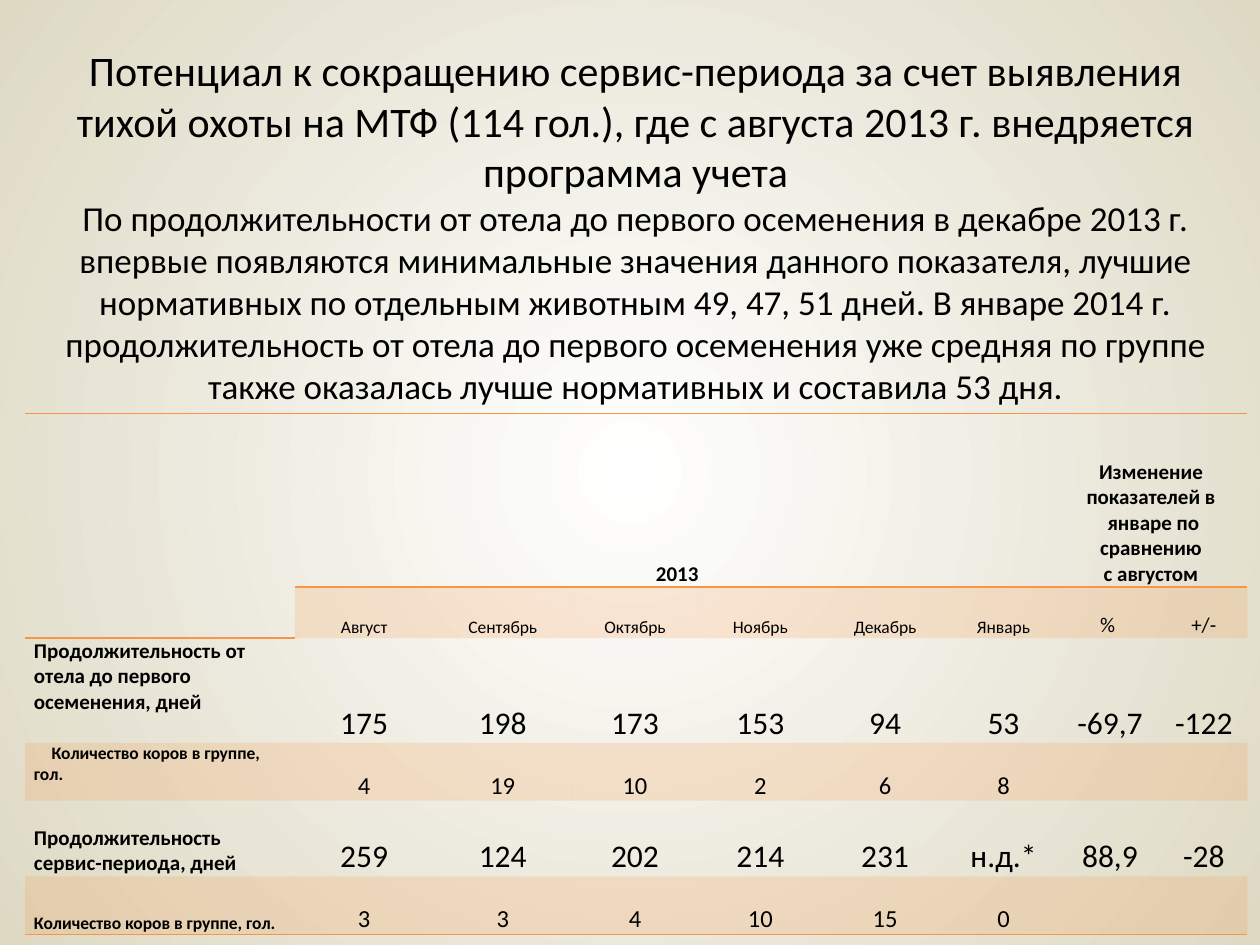
from lxml.etree import SubElement
from pptx import Presentation
from pptx.dml.color import RGBColor
from pptx.enum.text import MSO_ANCHOR as Anchor, PP_ALIGN as Align
from pptx.oxml.ns import qn
from pptx.util import Inches, Pt

BLACK = RGBColor(0x00, 0x00, 0x00)
WHITE = RGBColor(0xFF, 0xFF, 0xFF)
SAND = RGBColor(0xDD, 0xD9, 0xC3)
ORANGE = RGBColor(0xF7, 0x96, 0x46)
NO_STYLE = "{2D5ABB26-0587-4C30-8999-92F81FD0307C}"


def write(paragraph, text, size=12, bold=False, align=Align.CENTER, indent=0):
    paragraph.alignment = align
    if indent:
        paragraph._p.get_or_add_pPr().set("indent", str(Inches(indent)))
    run = paragraph.add_run()
    run.text = text
    font = run.font
    font.name, font.size, font.bold = "Calibri", Pt(size), bold
    font.color.rgb = BLACK


def add_border(cell, side):
    line = SubElement(cell._tc.get_or_add_tcPr(), qn(f"a:ln{side}"), w=str(Pt(1)))
    SubElement(SubElement(line, qn("a:solidFill")), qn("a:srgbClr"), val=str(ORANGE))


prs = Presentation()
prs.slide_width, prs.slide_height = Inches(10), Inches(7.5)
slide = prs.slides.add_slide(prs.slide_layouts[5])

# Background: round gradient from the centre
background = slide.background.fill
background.gradient()
for stop, color in zip(background.gradient_stops, (WHITE, SAND)):
    stop.color.rgb = color
gradient = slide._element.find(".//" + qn("a:gradFill"))
gradient.remove(gradient.find(qn("a:lin")))
circle = SubElement(gradient, qn("a:path"), path="circle")
SubElement(circle, qn("a:fillToRect"), l="50000", t="50000", r="50000", b="50000")

# Title with its explanation
title = slide.shapes.title
title.left, title.top = Inches(0.28), Inches(0.3)
title.width, title.height = Inches(9.53), Inches(2.98)
title.text_frame.word_wrap = True
title.text_frame.vertical_anchor = Anchor.MIDDLE
heading = title.text_frame.paragraphs[0]
write(heading, "Потенциал к сокращению сервис-периода за счет выявления тихой охоты "
      "на МТФ (114 гол.), где с августа 2013 г. внедряется программа учета", size=24)
heading.add_line_break()
write(heading, "По продолжительности от отела до первого осеменения в декабре 2013 г. "
      "впервые появляются минимальные значения данного показателя, лучшие нормативных "
      "по отдельным животным 49, 47, 51 дней. В январе 2014 г. продолжительность "
      "от отела до первого осеменения уже средняя по группе также оказалась лучше "
      "нормативных и составила 53 дня.", size=20)

# Table grid
col_widths = [2.14, 1.1, 1.1, 1, 0.99, 0.99, 0.89, 0.8, 0.69]
row_heights = [1.38, 0.3, 0.83, 0.46, 0.6, 0.46]
indicators = slide.shapes.add_table(
    len(row_heights), len(col_widths),
    Inches(0.2), Inches(3.28), Inches(9.69), Inches(4.03)).table
indicators.first_row = indicators.horz_banding = False
indicators._tbl.tblPr.find(qn("a:tableStyleId")).text = NO_STYLE
for column, width in zip(indicators.columns, col_widths):
    column.width = Inches(width)
for row, height in zip(indicators.rows, row_heights):
    row.height = Inches(height)
indicators.cell(0, 0).merge(indicators.cell(1, 0))
indicators.cell(0, 1).merge(indicators.cell(0, 6))
indicators.cell(0, 7).merge(indicators.cell(0, 8))

# Rows of content, with the text size of the values in each
change = "Изменение \nпоказателей в \nянваре по сравнению \nс августом "
days_to_first = "Продолжительность от отела до первого осеменения, дней"
service_period = "Продолжительность сервис-периода, дней"
cow_count = "Количество коров в группе, гол."
content = [
    (12, ["", "2013", "", "", "", "", "", change, ""]),
    (10, ["", "Август", "Сентябрь", "Октябрь", "Ноябрь", "Декабрь", "Январь", "% ", "+/-"]),
    (18, [days_to_first, "175", "198", "173", "153", "94", "53", "-69,7", "-122"]),
    (14, [cow_count, "4", "19", "10", "2", "6", "8", "", ""]),
    (18, [service_period, "259", "124", "202", "214", "231", "н.д.*", "88,9", "-28"]),
    (14, [cow_count, "3", "3", "4", "10", "15", "0", "", ""]),
]
for r, (value_size, texts) in enumerate(content):
    for c, text in enumerate(texts):
        cell = indicators.cell(r, c)

        # Rules above and below the header, and under the last row
        if r == 0:
            add_border(cell, "T")
        if r in (0, 5) or (r, c) == (1, 0):
            add_border(cell, "B")

        # Tinted every second row
        if r % 2 and (r, c) != (1, 0):
            cell.fill.solid()
            cell.fill.fore_color.rgb = ORANGE
            tint = cell._tc.tcPr.find(qn("a:solidFill")).find(qn("a:srgbClr"))
            SubElement(tint, qn("a:alpha"), val="20000")
        else:
            cell.fill.background()

        if not text:
            continue
        cell.margin_left = cell.margin_right = Inches(0.07)
        cell.margin_top = cell.margin_bottom = 0
        top_label = c == 0 and r in (2, 3)
        cell.vertical_anchor = Anchor.TOP if top_label else Anchor.BOTTOM
        if c == 0:
            style = dict(size=10 if text == cow_count else 12, bold=True,
                         align=Align.LEFT, indent=0.14 if r == 3 else 0)
        else:
            style = dict(size=12 if r == 1 and c > 6 else value_size, bold=r == 0)
        for i, line in enumerate(text.split("\n")):
            frame = cell.text_frame
            write(frame.add_paragraph() if i else frame.paragraphs[0], line, **style)

prs.save("out.pptx")
